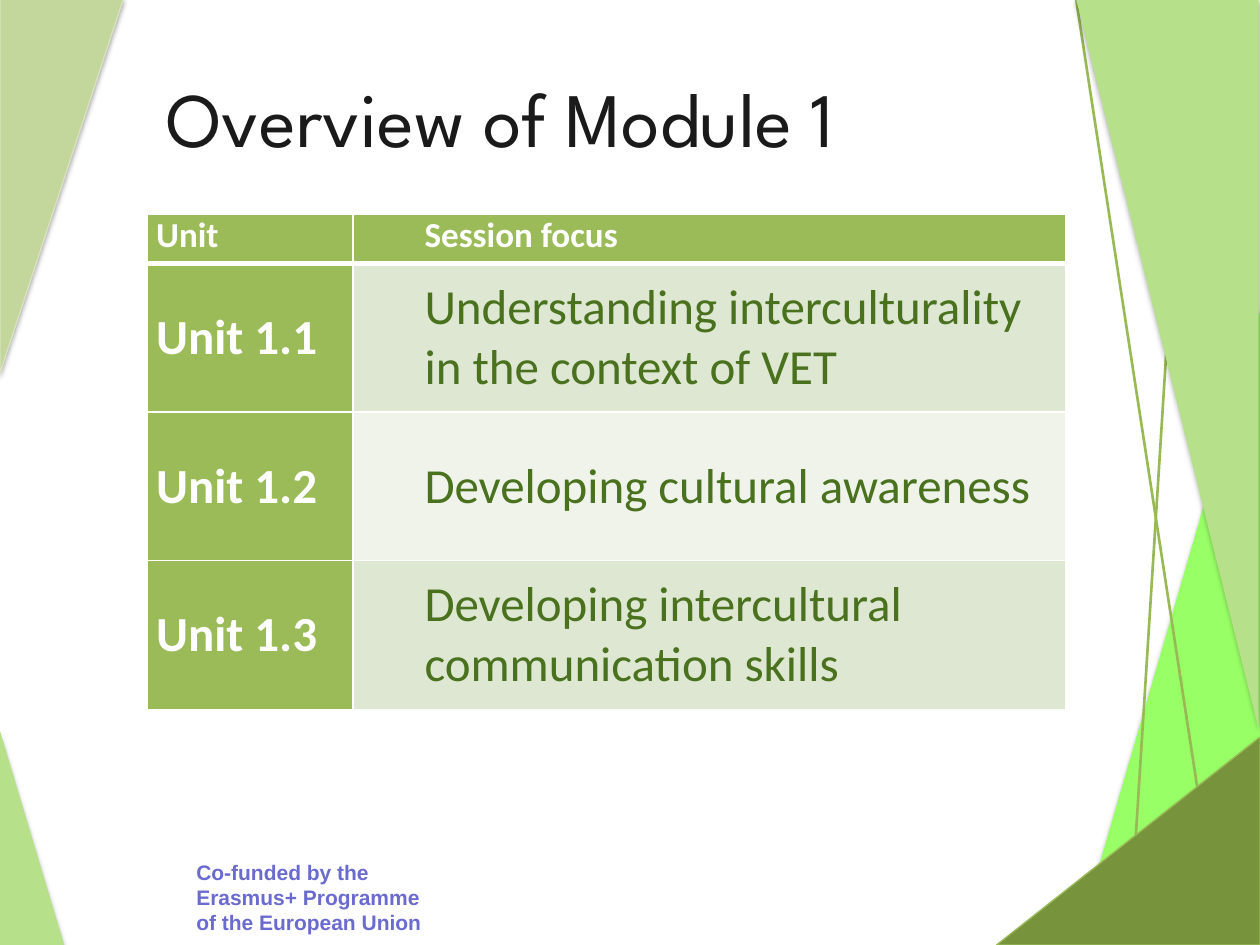
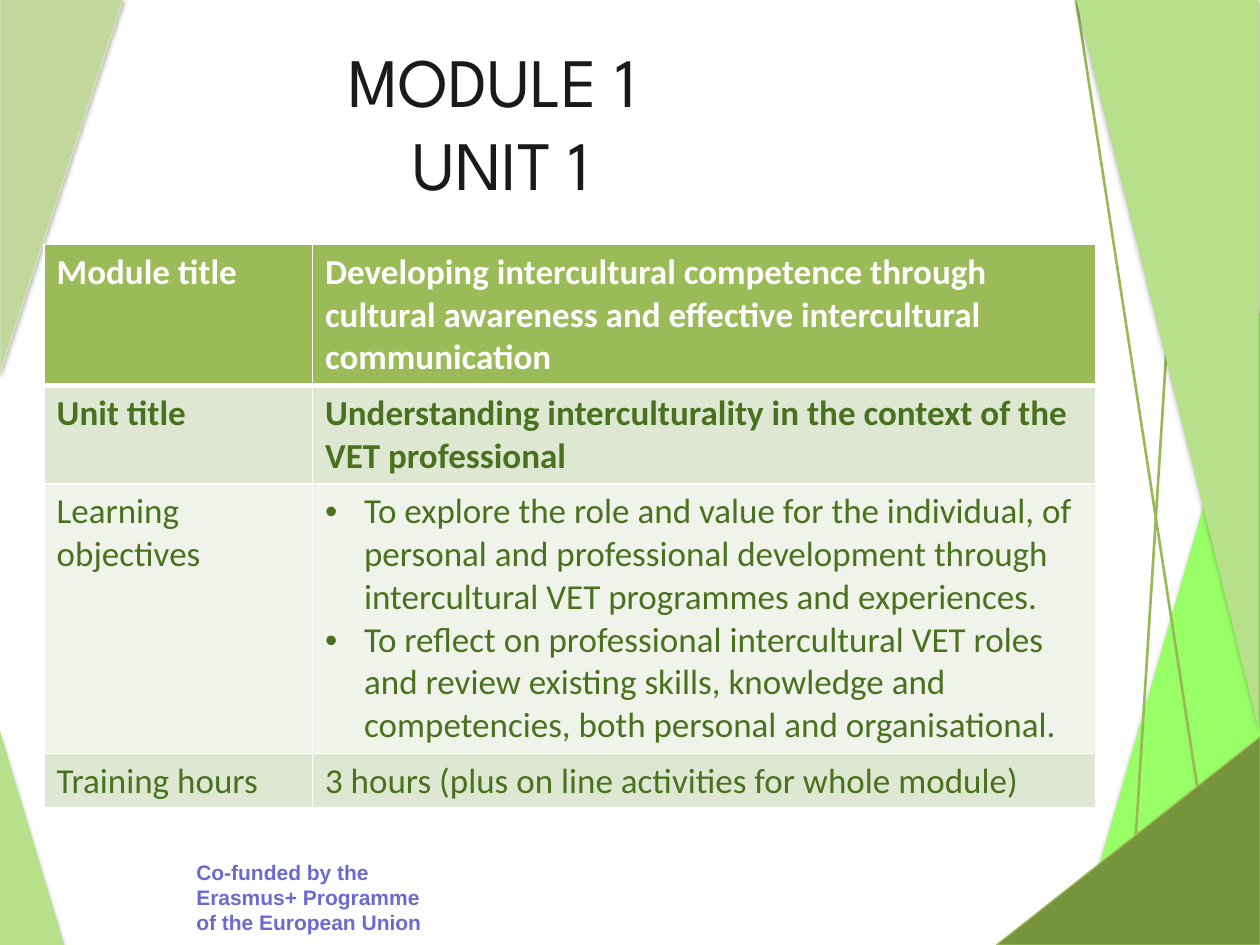
from lxml import etree
from pptx import Presentation
from pptx import util as u
from pptx.dml import color
from pptx.enum import shapes, text
from pptx.oxml import ns

Inches, Pt = u.Inches, u.Pt

# Shared palette and fonts
LIME, LEAF, SAGE, OLIVE = "99FF66", "B7E08B", "C3D69B", "77933C"
EDGE, LINE = "D7E4BD", "98B955"
HEADER, BANDS = "9BBB59", ("EFF3EA", "DEE7D1")
WHITE, INK, BODY, FUNDING = "FFFFFF", "1A1A1A", "49711E", "6B6BCF"
TITLE_FONT, TABLE_FONT, FOOTER_FONT = "League Spartan", "Calibri", "Arial"


def rgb(value):
    return color.RGBColor.from_string(value)


def add_xml(parent, tag, **attributes):
    child = etree.SubElement(parent, ns.qn(tag))
    for name, value in attributes.items():
        child.set(name, str(value))
    return child


def set_font(p, name, size, colour, bold=False):
    p.font.name, p.font.size, p.font.bold = name, Pt(size), bold
    p.font.color.rgb = rgb(colour)


# Background decoration
def add_shadow(sp, alpha, distance):
    effects = add_xml(sp.element.spPr, "a:effectLst")
    shadow = add_xml(effects, "a:outerShdw", blurRad=Pt(3.1), dist=Pt(distance),
                     dir=90 * 60000, algn="ctr", rotWithShape=0)
    black = add_xml(shadow, "a:srgbClr", val="000000")
    add_xml(black, "a:alpha", val=alpha * 1000)


def add_triangle(s, box, fill, flip="", line=None, alpha=35, distance=1.8):
    sp = s.shapes.add_shape(shapes.MSO_SHAPE.RIGHT_TRIANGLE, *map(Inches, box))
    xfrm = sp.element.spPr.get_or_add_xfrm()
    for axis in flip:
        xfrm.set("flip" + axis, "1")
    sp.fill.solid()
    sp.fill.fore_color.rgb = rgb(fill)
    if line:
        sp.line.color.rgb = rgb(line)
        sp.line.width = Pt(0.75)
    else:
        sp.line.fill.background()
    add_shadow(sp, alpha, distance)


def add_line(s, *ends):
    sp = s.shapes.add_connector(shapes.MSO_CONNECTOR.STRAIGHT, *map(Inches, ends))
    sp.line.color.rgb = rgb(LINE)
    sp.line.width = Pt(1.5)
    add_xml(sp.element.spPr, "a:effectLst")


def add_text(s, box, words, font, align=None, anchor=None):
    tf = s.shapes.add_textbox(*map(Inches, box)).text_frame
    tf.word_wrap = True
    tf.vertical_anchor = anchor
    p = tf.paragraphs[0]
    p.text = words
    p.alignment = align
    set_font(p, *font)
    return tf


def add_base_slide(prs):
    s = prs.slides.add_slide(prs.slide_layouts[6])
    add_triangle(s, (8.54, 2.41, 1.48, 5.09), LIME, "H", alpha=38, distance=1.6)
    add_text(s, (1.46, 6.77, 2, 0.71),
             "Co-funded by the Erasmus+ Programme of the European Union",
             (FOOTER_FONT, 12, FUNDING, True))
    add_triangle(s, (0, 5.8, 0.51, 1.7), LEAF)
    add_triangle(s, (0, -0.01, 0.98, 2.97), SAGE, "V", EDGE)
    add_line(s, 8.96, 7.5, 9.3, 2.1)
    add_line(s, 9.65, 7.21, 8.54, -0.01)
    add_triangle(s, (8.54, -0.01, 1.45, 5.8), LEAF, "HV")
    add_triangle(s, (7.91, 5.85, 2.09, 1.65), OLIVE, "H", LINE)
    return s


def add_title(s, box, words, size, anchor=text.MSO_ANCHOR.MIDDLE):
    return add_text(s, box, words, (TITLE_FONT, size, INK),
                    text.PP_ALIGN.CENTER, anchor)


# Tables
def set_borders(cell, row):
    tcPr = cell._tc.get_or_add_tcPr()
    widths = {"L": 1, "R": 1, "T": 3 if row == 1 else 1, "B": 3 if row == 0 else 1}
    for side, width in widths.items():
        ln = add_xml(tcPr, "a:ln" + side, w=Pt(width))
        add_xml(add_xml(ln, "a:solidFill"), "a:srgbClr", val=WHITE)


def fill_cell(cell, row, words, size, strong, bold, indent):
    set_borders(cell, row)
    cell.fill.solid()
    cell.fill.fore_color.rgb = rgb(HEADER if strong else BANDS[row % 2])
    bulleted = isinstance(words, list)
    cell.text = "\n".join(words) if bulleted else words
    for p in cell.text_frame.paragraphs:
        pPr = p._p.get_or_add_pPr()
        if bulleted:
            pPr.set("marL", str(Inches(0.31)))
            pPr.set("indent", str(-Inches(0.31)))
            add_xml(pPr, "a:buFont", typeface="Arial")
            add_xml(pPr, "a:buChar", char="•")
        elif indent:
            pPr.set("marL", str(Inches(indent)))
        set_font(p, TABLE_FONT, size, WHITE if strong else BODY, strong or bold)


def add_table(s, left, top, widths, heights, rows, body_size=20, bold_rows=1,
              strong_column=False, indent=0, margins=(0.1, 0.05), anchor=None):
    frame = s.shapes.add_table(len(rows), len(widths), Inches(left), Inches(top),
                               Inches(sum(widths)), Inches(sum(heights)))
    table = frame.table
    table.first_row = table.horz_banding = False
    for column, width in zip(table.columns, widths):
        column.width = Inches(width)
    for r, (words_in_row, height) in enumerate(zip(rows, heights)):
        table.rows[r].height = Inches(height)
        for c, words in enumerate(words_in_row):
            cell = table.cell(r, c)
            cell.margin_left = cell.margin_right = Inches(margins[0])
            cell.margin_top = cell.margin_bottom = Inches(margins[1])
            if r:
                cell.vertical_anchor = anchor
            fill_cell(cell, r, words, body_size if r else 20,
                      strong=r == 0 or (strong_column and c == 0),
                      bold=r < bold_rows, indent=indent if c else 0)


# Slides
def add_overview(prs):
    s = add_base_slide(prs)
    add_title(s, (0.59, 0.3, 6.77, 1.25), "Overview of Module 1", 44)
    rows = [
        ("Unit", "Session focus"),
        ("Unit 1.1", "Understanding interculturality in the context of VET"),
        ("Unit 1.2", "Developing cultural awareness"),
        ("Unit 1.3", "Developing intercultural communication skills"),
    ]
    add_table(s, 1.17, 1.7, (1.63, 5.66), [0.39] + [1.18] * 3, rows, body_size=28,
              strong_column=True, indent=0.5, margins=(0.07, 0),
              anchor=text.MSO_ANCHOR.MIDDLE)


def add_unit(prs):
    s = add_base_slide(prs)
    tf = add_title(s, (0.74, 0.3, 6.47, 1.95), "MODULE 1 \vUNIT 1", 39.6,
                   text.MSO_ANCHOR.TOP)
    tf.margin_top = 0
    objectives = [
        "To explore the role and value for the individual, of personal and "
        "professional development through intercultural VET programmes and "
        "experiences.",
        "To reflect on professional intercultural VET roles and review existing "
        "skills, knowledge and competencies, both personal and organisational.",
    ]
    rows = [
        ("Module title", "Developing intercultural competence through cultural "
                         "awareness and effective intercultural communication"),
        ("Unit title", "Understanding interculturality in the context of the "
                       "VET professional"),
        ("Learning objectives", objectives),
        ("Training hours", "3 hours (plus on line activities for whole module)"),
    ]
    add_table(s, 0.35, 1.94, (2.13, 6.22), (1.12, 0.78, 2.14, 0.43), rows,
              bold_rows=2)


def main():
    prs = Presentation()
    prs.slide_width, prs.slide_height = Inches(10), Inches(7.5)
    add_overview(prs)
    add_unit(prs)
    prs.save("out.pptx")


if __name__ == "__main__":
    main()
